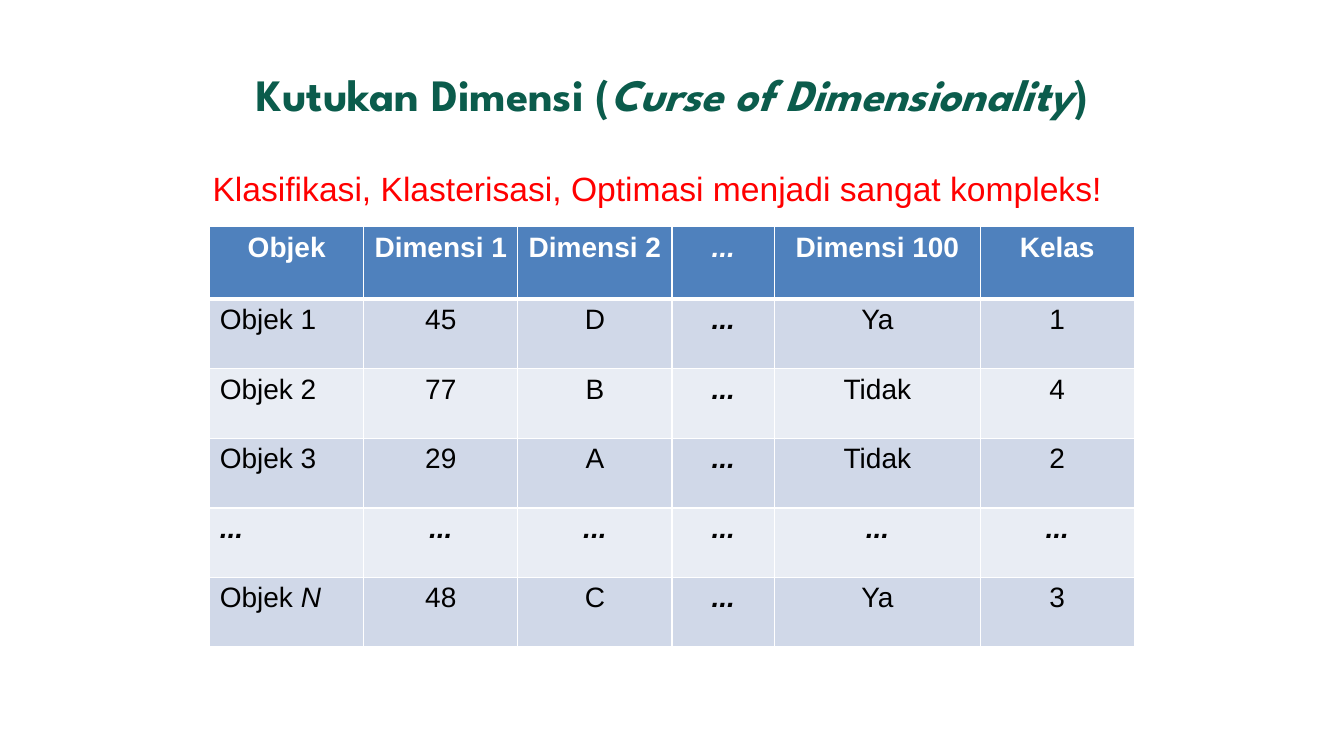
from dataclasses import dataclass

from lxml.etree import SubElement
from pptx import Presentation
from pptx.dml.color import RGBColor
from pptx.enum.text import MSO_ANCHOR, MSO_AUTO_SIZE, PP_ALIGN
from pptx.oxml.ns import qn
from pptx.util import Inches, Pt

SLIDE_WIDTH, SLIDE_HEIGHT = Inches(13.33), Inches(7.5)
ELLIPSIS = "..."
COLUMN_UNITS = (3, 3, 3, 2, 4, 3)
HEADER_SHARE, BODY_SHARE = 9.6, 9.2
HEADER_FILL, BAND_FILLS = "4F81BD", ("D0D8E8", "E9EDF4")
ROWS = (
    ("Objek", "Dimensi 1", "Dimensi 2", ELLIPSIS, "Dimensi 100", "Kelas"),
    ("Objek 1", "45", "D", ELLIPSIS, "Ya", "1"),
    ("Objek 2", "77", "B", ELLIPSIS, "Tidak", "4"),
    ("Objek 3", "29", "A", ELLIPSIS, "Tidak", "2"),
    (ELLIPSIS,) * len(COLUMN_UNITS),
    ("Objek N", "48", "C", ELLIPSIS, "Ya", "3"),
)


@dataclass(frozen=True)
class Box:
    """A rectangle in percent of the slide's width and height."""

    left: float
    top: float
    width: float
    height: float

    def lengths(self) -> dict[str, int]:
        """Return the rectangle as slide lengths."""
        return {
            "left": across(self.left),
            "top": down(self.top),
            "width": across(self.width),
            "height": down(self.height),
        }


@dataclass(frozen=True)
class Run:
    """A piece of text with its own weight and slant."""

    text: str
    bold: bool = False
    italic: bool = False


@dataclass(frozen=True)
class Style:
    """The font shared by all runs of a paragraph."""

    name: str
    size: int
    color: str


TITLE_BOX = Box(10.95, 8.13, 78.17, 8.53)
TABLE_BOX = Box(15.6, 30, 68.8, 55.6)
MESSAGE_BOX = Box(15.08, 21.6, 69.24, 6.67)
TITLE_STYLE = Style("League Spartan", 32, "0B5C4C")
MESSAGE_STYLE = Style("Arial", 24, "FF0000")
HEADER_STYLE = Style("Arial", 20, "FFFFFF")
BODY_STYLE = Style("Arial", 20, "000000")


def across(percent: float) -> int:
    """Convert a share of the slide's width."""
    return round(SLIDE_WIDTH * percent / 100)


def down(percent: float) -> int:
    """Convert a share of the slide's height."""
    return round(SLIDE_HEIGHT * percent / 100)


def rgb(color: str) -> RGBColor:
    """Convert a hex string to a colour."""
    return RGBColor.from_string(color)


def set_all(target: object, values: dict) -> None:
    """Set each named attribute of the target."""
    for name, value in values.items():
        setattr(target, name, value)


def write(paragraph, runs: list[Run], style: Style, alignment: PP_ALIGN) -> None:
    """Fill a paragraph with formatted runs."""
    paragraph.alignment = alignment
    for item in runs:
        run = paragraph.add_run()
        run.text = item.text
        set_all(run.font, {
            "name": style.name,
            "size": Pt(style.size),
            "bold": item.bold,
            "italic": item.italic,
        })
        run.font.color.rgb = rgb(style.color)


def place_text(shape, box: Box, anchor: MSO_ANCHOR):
    """Place a text shape and return its first paragraph."""
    set_all(shape, box.lengths())
    set_all(shape.text_frame, {
        "word_wrap": True,
        "auto_size": MSO_AUTO_SIZE.SHAPE_TO_FIT_TEXT,
        "vertical_anchor": anchor,
    })
    return shape.text_frame.paragraphs[0]


def cell_runs(text: str, header: bool) -> list[Run]:
    """Split a cell's text so that the variable N is italic."""
    if text == ELLIPSIS:
        return [Run(text, bold=True, italic=True)]
    if text.endswith(" N"):
        return [Run(text[:-1]), Run("N", italic=True)]
    return [Run(text, bold=header)]


def draw_borders(cell, bottom_width: int) -> None:
    """Give a cell white borders."""
    properties = cell._tc.get_or_add_tcPr()
    for side, width in {"L": 1, "R": 1, "T": 1, "B": bottom_width}.items():
        line = SubElement(properties, qn(f"a:ln{side}"), w=str(Pt(width)))
        SubElement(SubElement(line, qn("a:solidFill")), qn("a:srgbClr"), val="FFFFFF")


def draw_table(slide) -> None:
    """Draw the table of objects and dimensions."""
    frame = slide.shapes.add_table(len(ROWS), len(COLUMN_UNITS), **TABLE_BOX.lengths())
    table = frame.table
    for column, units in zip(table.columns, COLUMN_UNITS):
        column.width = across(TABLE_BOX.width * units / sum(COLUMN_UNITS))
    for row_index, texts in enumerate(ROWS):
        header = row_index == 0
        table.rows[row_index].height = down(HEADER_SHARE if header else BODY_SHARE)
        fill = HEADER_FILL if header else BAND_FILLS[(row_index - 1) % 2]
        style = HEADER_STYLE if header else BODY_STYLE
        for column_index, text in enumerate(texts):
            cell = table.cell(row_index, column_index)
            draw_borders(cell, 3 if header else 1)
            cell.fill.solid()
            cell.fill.fore_color.rgb = rgb(fill)
            centred = header or column_index > 0
            alignment = PP_ALIGN.CENTER if centred else PP_ALIGN.LEFT
            write(cell.text_frame.paragraphs[0], cell_runs(text, header), style, alignment)


def main() -> None:
    """Build and save the slide."""
    presentation = Presentation()
    set_all(presentation, {"slide_width": SLIDE_WIDTH, "slide_height": SLIDE_HEIGHT})
    slide = presentation.slides.add_slide(presentation.slide_layouts.get_by_name("Title Only"))
    title_runs = [
        Run("Kutukan Dimensi (", bold=True),
        Run("Curse of Dimensionality", bold=True, italic=True),
        Run(")", bold=True),
    ]
    title = place_text(slide.shapes.title, TITLE_BOX, MSO_ANCHOR.MIDDLE)
    write(title, title_runs, TITLE_STYLE, PP_ALIGN.CENTER)
    draw_table(slide)
    message_shape = slide.shapes.add_textbox(**MESSAGE_BOX.lengths())
    message = place_text(message_shape, MESSAGE_BOX, MSO_ANCHOR.TOP)
    message_runs = [Run("Klasifikasi, Klasterisasi, Optimasi menjadi sangat kompleks!")]
    write(message, message_runs, MESSAGE_STYLE, PP_ALIGN.LEFT)
    presentation.save("out.pptx")


if __name__ == "__main__":
    main()
